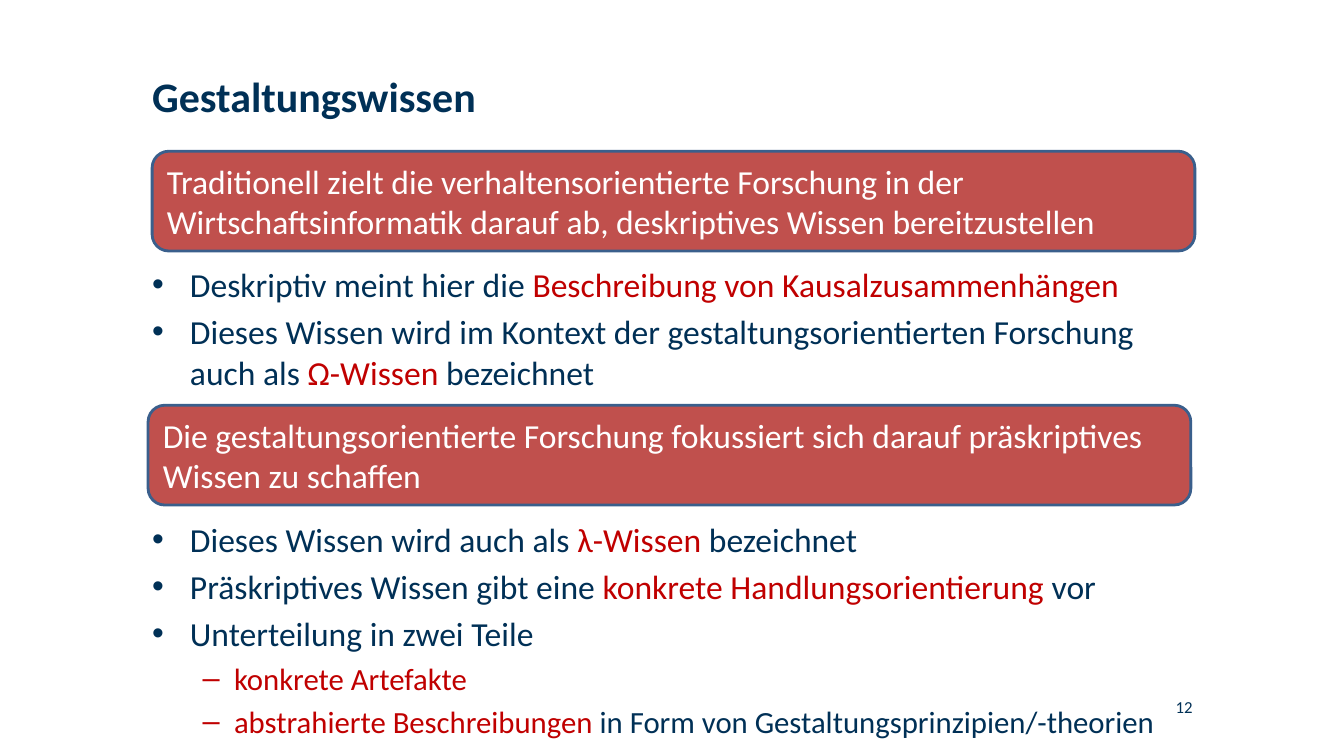
import pptx
import pptx.dml.color
import pptx.enum.shapes
import pptx.enum.text
import pptx.util

COLOURS = {
    "navy": "003056",
    "accent": "C00000",
    "banner": "C0504D",
    "border": "3A5F8C",
    "white": "FFFFFF",
}
FONT = "Calibri"
WIDTH = pptx.util.Inches(13.34)
HEIGHT = pptx.util.Inches(7.5)
LEFT = 11.32
LIST_WIDTH = 77.29
TWO_CONTENT_LAYOUT = 3
LEVEL_SIZES = (24, 22)

# Each list item is its level followed by (text, colour) spans.
DESCRIPTIVE = [
    (0, ("Deskriptiv meint hier die ", "navy"),
     ("Beschreibung von Kausalzusammenhängen", "accent")),
    (0, ("Dieses Wissen wird im Kontext der gestaltungsorientierten "
         "Forschung auch als ", "navy"),
     ("Ω-Wissen", "accent"), (" bezeichnet", "navy")),
]
PRESCRIPTIVE = [
    (0, ("Dieses Wissen wird auch als ", "navy"),
     ("λ-Wissen", "accent"), (" bezeichnet", "navy")),
    (0, ("Präskriptives Wissen gibt eine ", "navy"),
     ("konkrete Handlungsorientierung ", "accent"), ("vor", "navy")),
    (0, ("Unterteilung in zwei Teile", "navy")),
    (1, ("konkrete Artefakte", "accent")),
    (1, ("abstrahierte Beschreibungen ", "accent"),
     ("in Form von Gestaltungsprinzipien/-theorien", "navy")),
]


def colour(name):
    return pptx.dml.color.RGBColor.from_string(COLOURS[name])


def area(left, top, width, height):
    """Turn percentages of the slide into lengths."""
    return (int(WIDTH * left / 100), int(HEIGHT * top / 100),
            int(WIDTH * width / 100), int(HEIGHT * height / 100))


def place(box, *shares):
    box.left, box.top, box.width, box.height = area(*shares)


def set_frame(box, anchor="TOP", inset=0):
    frame = box.text_frame
    frame.word_wrap = True
    frame.auto_size = pptx.enum.text.MSO_AUTO_SIZE.NONE
    frame.vertical_anchor = getattr(pptx.enum.text.MSO_ANCHOR, anchor)
    frame.margin_left = frame.margin_right = pptx.util.Inches(2 * inset)
    frame.margin_top = frame.margin_bottom = pptx.util.Inches(inset)
    return frame


def add_text(para, text, size=24, fill="navy", bold=False, align="LEFT"):
    para.alignment = getattr(pptx.enum.text.PP_ALIGN, align)
    span = para.add_run()
    span.text = text
    span.font.name = FONT
    span.font.size = pptx.util.Pt(size)
    span.font.bold = bold
    span.font.color.rgb = colour(fill)


def fill_title(box, text):
    place(box, LEFT, 8.93, 52.92, 7.47)
    frame = set_frame(box, anchor="MIDDLE")
    add_text(frame.paragraphs[0], text, size=30, bold=True)


def fill_list(box, top, height, items):
    place(box, LEFT, top, LIST_WIDTH, height)
    frame = set_frame(box)
    for index, (level, *spans) in enumerate(items):
        para = frame.add_paragraph() if index else frame.paragraphs[0]
        para.level = level
        for text, fill in spans:
            add_text(para, text, size=LEVEL_SIZES[level], fill=fill)


def add_banner(page, left, top, text):
    box = page.shapes.add_shape(
        pptx.enum.shapes.MSO_SHAPE.ROUNDED_RECTANGLE,
        *area(left, top, 77.59, 13.2))
    box.shadow.inherit = False
    box.fill.solid()
    box.fill.fore_color.rgb = colour("banner")
    box.line.color.rgb = colour("border")
    box.line.width = pptx.util.Pt(2)
    frame = set_frame(box, anchor="MIDDLE", inset=0.05)
    add_text(frame.paragraphs[0], text, fill="white")


def add_page_number(page, number):
    box = page.shapes.add_textbox(*area(77.21, 92.13, 11.54, 2.67))
    frame = set_frame(box)
    add_text(frame.paragraphs[0], number, size=12, align="RIGHT")


def main():
    deck = pptx.Presentation()
    deck.slide_width, deck.slide_height = WIDTH, HEIGHT
    page = deck.slides.add_slide(deck.slide_layouts[TWO_CONTENT_LAYOUT])
    title, upper_list, lower_list = page.placeholders

    fill_title(title, "Gestaltungswissen")
    fill_list(upper_list, 34.93, 18.67, DESCRIPTIVE)
    fill_list(lower_list, 68.67, 31.33, PRESCRIPTIVE)
    add_banner(page, LEFT, 20,
               "Traditionell zielt die verhaltensorientierte Forschung in der "
               "Wirtschaftsinformatik darauf ab, deskriptives Wissen "
               "bereitzustellen")
    add_banner(page, 11.02, 53.6,
               "Die gestaltungsorientierte Forschung fokussiert sich darauf "
               "präskriptives Wissen zu schaffen")
    add_page_number(page, "12")
    deck.save("out.pptx")


if __name__ == "__main__":
    main()
